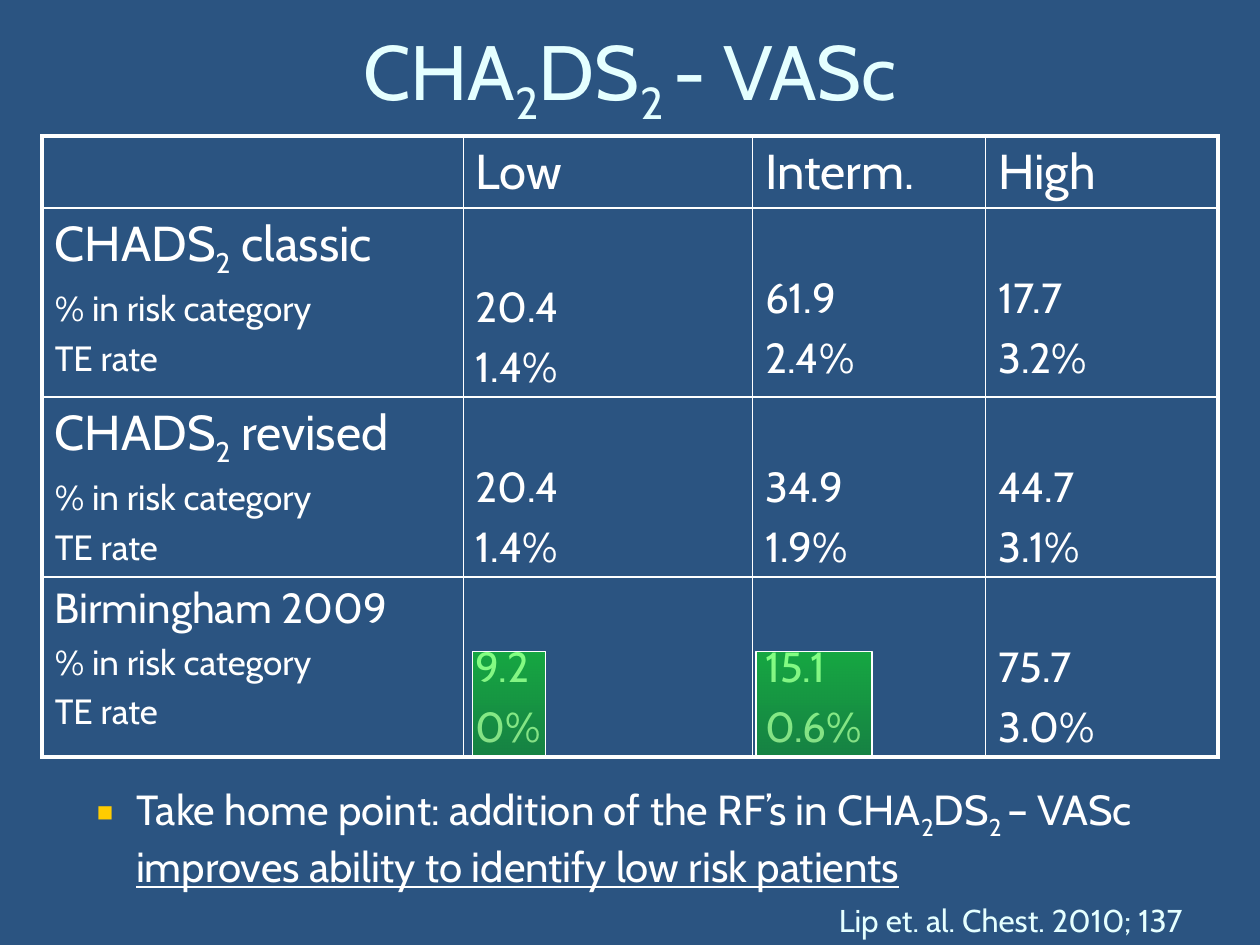
"""Build a slide comparing stroke risk schemes by category and event rate."""
from dataclasses import dataclass

from lxml import etree
from pptx import Presentation
from pptx.dml.color import RGBColor
from pptx.enum.shapes import MSO_SHAPE
from pptx.enum.text import MSO_ANCHOR, MSO_AUTO_SIZE, PP_ALIGN
from pptx.oxml.ns import qn
from pptx.util import Cm, Pt

RECTANGLE = MSO_SHAPE.RECTANGLE
TOP, MIDDLE = MSO_ANCHOR.TOP, MSO_ANCHOR.MIDDLE
CENTER, LEFT = PP_ALIGN.CENTER, PP_ALIGN.LEFT
NO_AUTOFIT = MSO_AUTO_SIZE.NONE
WHITE, PALE, NAVY, GOLD = "FFFFFF", "E5FFFF", "2B5481", "FFCC00"
THIN, THICK = 1, 2.25
COLUMN_WIDTHS = (8.49, 5.83, 4.7, 4.68)
HEADINGS = ("", "Low", "Interm.", "High")


@dataclass
class Line:
    """One paragraph, with subscripts set between tildes."""
    text: str
    size: float
    color: str = WHITE


@dataclass
class Scheme:
    """One risk scheme with a rate pair for each category."""
    name: str
    name_size: float
    height: float
    rates: tuple
    top_margins: tuple = (1.32, 1.32, 1.32)


@dataclass
class Highlight:
    """A translucent panel over one table cell."""
    left: float
    width: float


SCHEMES = (
    Scheme("CHADS~2~ classic", 28, 3.81,
           (("20.4", "1.4%"), ("61.9", "2.4%"), ("17.7", "3.2%")), (1.5, 1.32, 1.32)),
    Scheme("CHADS~2~ revised", 28, 3.63,
           (("20.4", "1.4%"), ("34.9", "1.9%"), ("44.7", "3.1%"))),
    Scheme("Birmingham 2009", 24, 3.63,
           (("9.2", "0%"), ("15.1", "0.6%"), ("75.7", "3.0%"))),
)
HIGHLIGHTS = (Highlight(9.53, 1.47), Highlight(15.24, 2.34))


def rgb(value: str) -> RGBColor:
    """Turn a hex string into a colour."""
    return RGBColor.from_string(value)


def apply(target, values: dict) -> None:
    """Set each named attribute on the target."""
    for name, value in values.items():
        setattr(target, name, value)


def add_spans(para, line: Line, underline: bool = False) -> None:
    """Add the runs of a line, lowering every second part."""
    for index, part in enumerate(line.text.split("~")):
        if not part:
            continue
        span = para.add_run()
        span.text = part
        apply(span.font, {"name": "Cabin", "size": Pt(line.size), "underline": underline})
        span.font.color.rgb = rgb(line.color)
        if index % 2:
            span.font._element.set("baseline", "-25000")


def write_lines(frame, lines: list[Line]) -> None:
    """Fill a text frame with lines spaced by a fifth of their size."""
    for index, line in enumerate(lines):
        para = frame.add_paragraph() if index else frame.paragraphs[0]
        para.space_before = Pt(line.size / 5 if index else 0)
        add_spans(para, line)


def place(box, left: float, top: float, width: float, height: float) -> None:
    """Move and size a box in centimetres."""
    apply(box, {"left": Cm(left), "top": Cm(top), "width": Cm(width), "height": Cm(height)})


def add_border(cell, side: str, width: float) -> None:
    """Draw one white border of a cell."""
    border = etree.SubElement(cell._tc.get_or_add_tcPr(), qn(f"a:{side}"), w=str(Pt(width)))
    fill = etree.SubElement(border, qn("a:solidFill"))
    etree.SubElement(fill, qn("a:srgbClr"), val=WHITE)


def format_cell(cell, row: int, column: int, last_row: int, last_column: int) -> None:
    """Give a cell its borders, thick on the outside, and no fill."""
    outside = {"lnL": column == 0, "lnR": column == last_column,
               "lnT": row == 0, "lnB": row == last_row}
    for side, is_outside in outside.items():
        add_border(cell, side, THICK if is_outside else THIN)
    cell.fill.background()


def add_rate_table(page) -> None:
    """Add the table of schemes against risk categories."""
    heights = [1.45] + [scheme.height for scheme in SCHEMES]
    grid = page.shapes.add_table(
        len(heights), len(COLUMN_WIDTHS), Cm(0.85), Cm(2.74),
        Cm(sum(COLUMN_WIDTHS)), Cm(sum(heights))).table
    apply(grid, {"first_row": False, "horz_banding": False})
    for column, width in zip(grid.columns, COLUMN_WIDTHS):
        column.width = Cm(width)
    for row, height in zip(grid.rows, heights):
        row.height = Cm(height)
    for column, heading in enumerate(HEADINGS):
        write_lines(grid.cell(0, column).text_frame, [Line(heading, 28)])
    for row, scheme in enumerate(SCHEMES, 1):
        labels = [Line(scheme.name, scheme.name_size),
                  Line("% in risk category", 20), Line("TE rate", 20)]
        write_lines(grid.cell(row, 0).text_frame, labels)
        for column, (pair, margin) in enumerate(zip(scheme.rates, scheme.top_margins), 1):
            cell = grid.cell(row, column)
            apply(cell, {"margin_top": Cm(margin), "margin_bottom": 0})
            write_lines(cell.text_frame, [Line(rate, 24) for rate in pair])
    for row in range(len(heights)):
        for column in range(len(COLUMN_WIDTHS)):
            format_cell(grid.cell(row, column), row, column,
                        len(heights) - 1, len(COLUMN_WIDTHS) - 1)


def add_highlight(page, highlight: Highlight) -> None:
    """Add a translucent green gradient panel."""
    panel = page.shapes.add_shape(RECTANGLE, Cm(highlight.left), Cm(13.13),
                                  Cm(highlight.width), Cm(2.11))
    panel.shadow.inherit = False
    panel.fill.gradient()
    panel.fill.gradient_angle = 270
    for stop, color in zip(panel.fill.gradient_stops, ("00FF00", "00B600")):
        stop.color.rgb = rgb(color)
    for color, alpha in zip(panel._element.spPr.iter(qn("a:srgbClr")), ("49000", "48000")):
        etree.SubElement(color, qn("a:alpha"), val=alpha)
    panel.line.color.rgb = rgb(WHITE)
    panel.line.width = Pt(0.75)


def add_title(page) -> None:
    """Fill the title placeholder."""
    title = page.shapes.title
    place(title, 1.27, 0.43, 22.86, 2.21)
    apply(title.text_frame, {"auto_size": NO_AUTOFIT, "vertical_anchor": MIDDLE})
    write_lines(title.text_frame, [Line("CHA~2~DS~2 ~- VASc", 44, PALE)])
    title.text_frame.paragraphs[0].alignment = CENTER


def add_take_home(page) -> None:
    """Fill the body placeholder with the bulleted conclusion."""
    body = page.placeholders[1]
    place(body, 0.43, 15.67, 24.13, 1.27)
    apply(body.text_frame, {"auto_size": NO_AUTOFIT, "vertical_anchor": TOP})
    para = body.text_frame.paragraphs[0]
    apply(para, {"level": 1, "alignment": LEFT, "space_before": Pt(0)})
    properties = para._p.get_or_add_pPr()
    apply_indent = {"marL": str(Cm(2.06)), "indent": str(Cm(-0.79))}
    for name, value in apply_indent.items():
        properties.set(name, value)
    bullet_color = etree.SubElement(properties, qn("a:buClr"))
    etree.SubElement(bullet_color, qn("a:srgbClr"), val=GOLD)
    etree.SubElement(properties, qn("a:buSzPct"), val="65000")
    etree.SubElement(properties, qn("a:buChar"), char="■")
    add_spans(para, Line("Take home point: addition of the RF’s in CHA~2~DS~2 ~– VASc ", 24))
    add_spans(para, Line("improves ability to identify low risk patients", 24), underline=True)


def add_citation(page) -> None:
    """Add the reference at the lower right."""
    box = page.shapes.add_textbox(Cm(16.66), Cm(18.03), Cm(8.15), Cm(1.02))
    box.text_frame.word_wrap = False
    write_lines(box.text_frame, [Line("Lip et. al. Chest. 2010; 137", 18, PALE)])


def main() -> None:
    """Build and save the deck."""
    deck = Presentation()
    apply(deck, {"slide_width": Cm(25.4), "slide_height": Cm(19.05)})
    page = deck.slides.add_slide(deck.slide_layouts[1])
    page.background.fill.solid()
    page.background.fill.fore_color.rgb = rgb(NAVY)
    add_title(page)
    add_citation(page)
    add_rate_table(page)
    add_take_home(page)
    for highlight in HIGHLIGHTS:
        add_highlight(page, highlight)
    deck.save("out.pptx")


if __name__ == "__main__":
    main()
